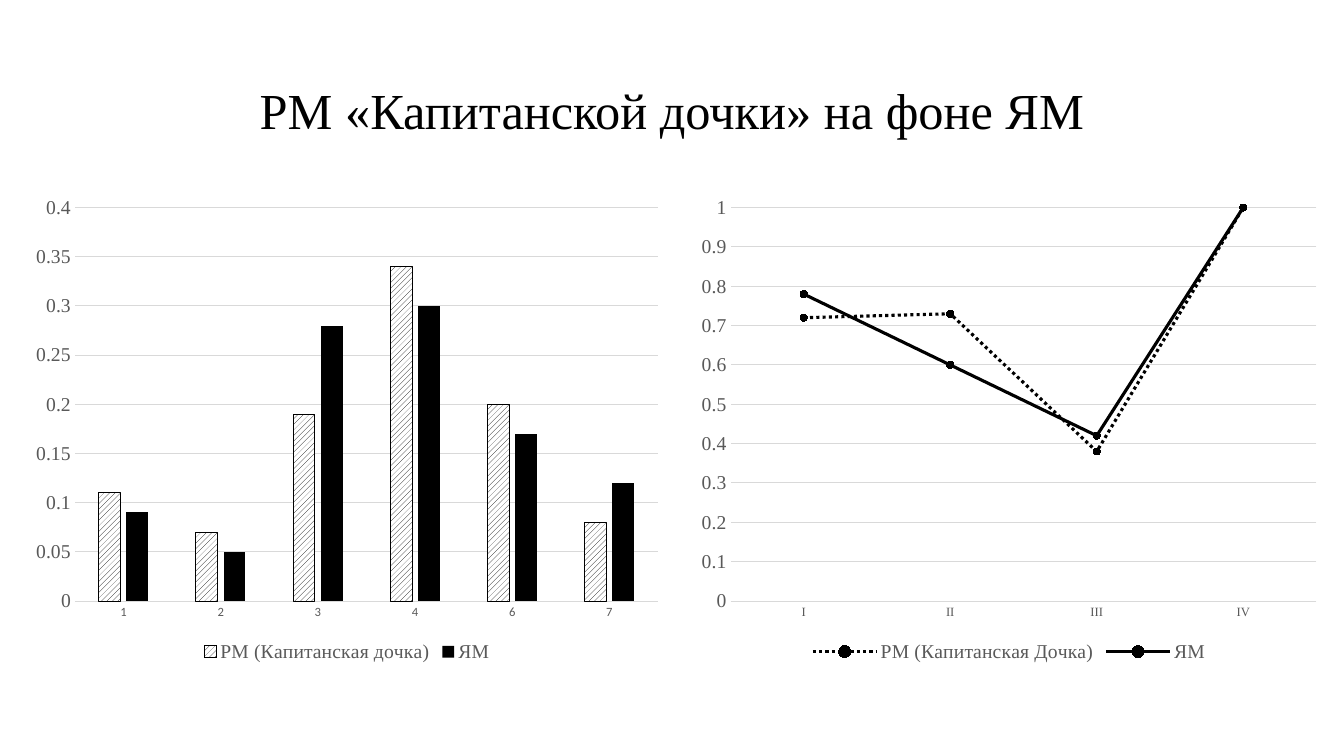
from dataclasses import dataclass

from pptx import Presentation
from pptx.chart.data import CategoryChartData
from pptx.dml.color import RGBColor
from pptx.enum.chart import XL_CHART_TYPE as CT, XL_LEGEND_POSITION as LP
from pptx.enum.chart import XL_MARKER_STYLE as MS, XL_TICK_MARK as TM
from pptx.enum.dml import MSO_LINE, MSO_PATTERN
from pptx.enum.text import MSO_ANCHOR, PP_ALIGN
from pptx.util import Emu, Pt


@dataclass(frozen=True)
class Theme:
    ink: RGBColor = RGBColor(0x00, 0x00, 0x00)
    paper: RGBColor = RGBColor(0xFF, 0xFF, 0xFF)
    label: RGBColor = RGBColor(0x59, 0x59, 0x59)
    grid: RGBColor = RGBColor(0xD9, 0xD9, 0xD9)
    serif: str = "Times New Roman"
    sans: str = "Calibri"
    title: int = 36
    scale: int = 14
    base: int = 10
    category: int = 9
    hairline: float = 0.75
    curve: float = 2.25


T = Theme()


def px(n):
    return Emu(n * 9525)


def box(*lengths):
    return [px(n) for n in lengths]


def set_font(font, name, size, color):
    font.name, font.size = name, Pt(size)
    font.color.rgb = color


def set_line(line, color, width):
    line.color.rgb = color
    line.width = Pt(width)


def add_title(slide, text, bounds):
    tf = slide.shapes.add_textbox(*box(*bounds)).text_frame
    tf.word_wrap = True
    tf.vertical_anchor = MSO_ANCHOR.MIDDLE
    p = tf.paragraphs[0]
    p.text = text
    p.alignment = PP_ALIGN.CENTER
    p.line_spacing = 0.9
    set_font(p.runs[0].font, T.serif, T.title, T.ink)


def add_chart(slide, kind, bounds, categories, series, top, step, font):
    data = CategoryChartData()
    data.categories = categories
    for name, values in series:
        data.add_series(name, values)
    chart = slide.shapes.add_chart(kind, *box(*bounds), data).chart
    chart.has_title = False
    set_font(chart.font, font, T.base, T.ink)

    chart.has_legend = True
    chart.legend.position = LP.BOTTOM
    chart.legend.include_in_layout = False
    set_font(chart.legend.font, T.serif, T.scale, T.label)

    cat, val = chart.category_axis, chart.value_axis
    for axis in (cat, val):
        axis.major_tick_mark = axis.minor_tick_mark = TM.NONE
    set_font(cat.tick_labels.font, font, T.category, T.label)
    set_line(cat.format.line, T.grid, T.hairline)
    set_font(val.tick_labels.font, T.serif, T.scale, T.label)
    val.format.line.fill.background()
    val.minimum_scale, val.maximum_scale, val.major_unit = 0, top, step
    set_line(val.major_gridlines.format.line, T.grid, T.hairline)

    plot = chart.plots[0]
    plot.vary_by_categories = False
    return plot


def style_columns(plot):
    plot.gap_width, plot.overlap = 219, -27
    novel, language = plot.series
    fill = novel.format.fill
    fill.patterned()
    fill.pattern = MSO_PATTERN.WIDE_UPWARD_DIAGONAL
    fill.fore_color.rgb, fill.back_color.rgb = T.ink, T.paper
    set_line(novel.format.line, T.ink, T.hairline)
    language.format.fill.solid()
    language.format.fill.fore_color.rgb = T.ink
    language.format.line.fill.background()


def style_curves(plot):
    for s, dash in zip(plot.series, (MSO_LINE.ROUND_DOT, MSO_LINE.SOLID)):
        s.smooth = False
        set_line(s.format.line, T.ink, T.curve)
        s.format.line.dash_style = dash
        s.marker.style, s.marker.size = MS.CIRCLE, 5
        s.marker.format.fill.solid()
        s.marker.format.fill.fore_color.rgb = T.ink
        set_line(s.marker.format.line, T.ink, T.hairline)


def main():
    prs = Presentation()
    prs.slide_width, prs.slide_height = box(1280, 720)
    slide = prs.slides.add_slide(prs.slide_layouts[6])
    add_title(slide, "РМ «Капитанской дочки» на фоне ЯМ", (88, 38, 1104, 139))
    curves = add_chart(
        slide, CT.LINE_MARKERS, (656, 178, 610, 457), ["I", "II", "III", "IV"],
        [("РМ (Капитанская Дочка)", (0.72, 0.73, 0.38, 1)),
         ("ЯМ", (0.78, 0.6, 0.42, 1))],
        1, 0.1, T.serif)
    style_curves(curves)
    columns = add_chart(
        slide, CT.COLUMN_CLUSTERED, (22, 178, 617, 457), list("123467"),
        [("РМ (Капитанская дочка)", (0.11, 0.07, 0.19, 0.34, 0.2, 0.08)),
         ("ЯМ", (0.09, 0.05, 0.28, 0.3, 0.17, 0.12))],
        0.4, 0.05, T.sans)
    style_columns(columns)
    prs.save("out.pptx")


if __name__ == "__main__":
    main()
